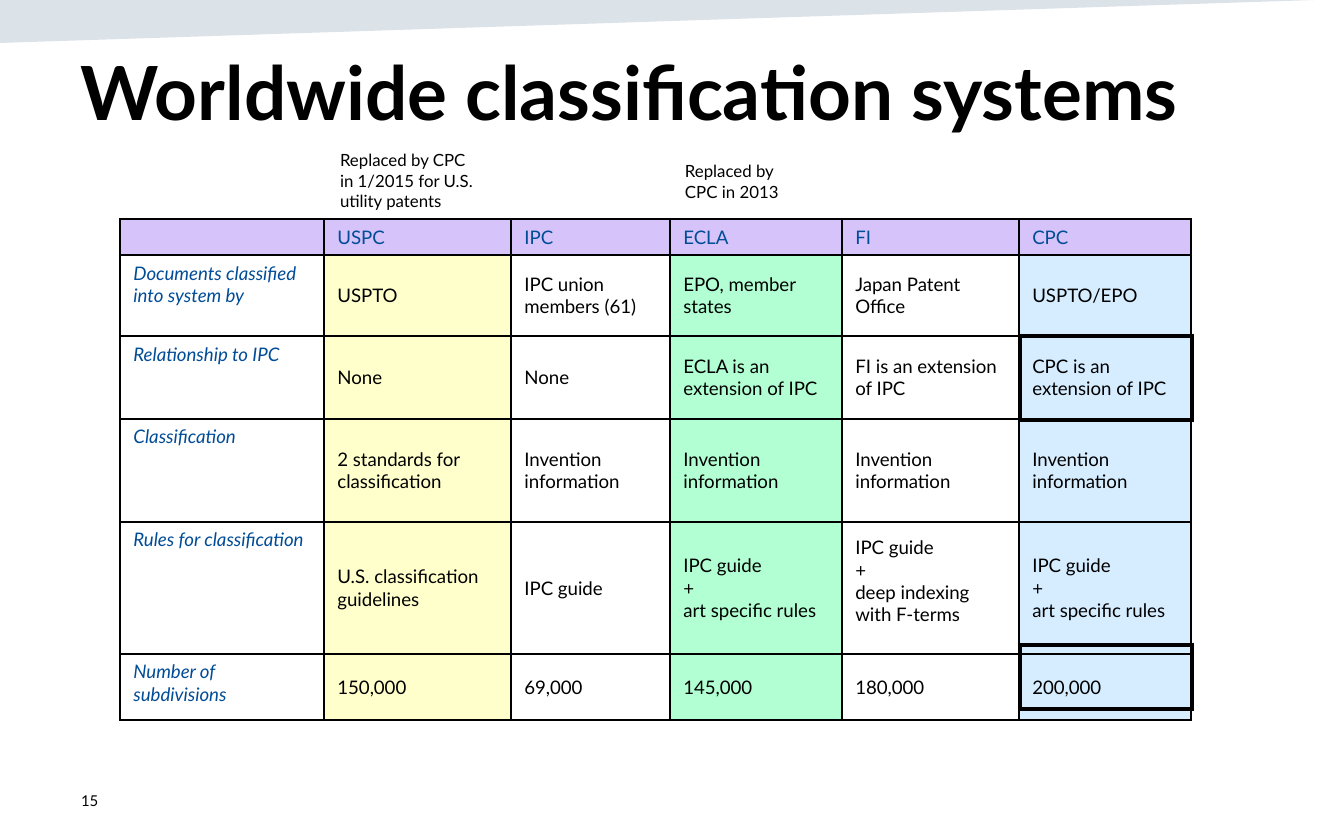
from dataclasses import dataclass

from lxml import etree
from pptx import Presentation
from pptx.dml.color import RGBColor
from pptx.enum import text
from pptx.oxml import ns
from pptx.util import Emu, Pt

EMU_PER_PX = 914400 / 134.4
FONT = "Lato"

BLACK = RGBColor(0x00, 0x00, 0x00)
WHITE = RGBColor(0xFF, 0xFF, 0xFF)
BLUE = RGBColor(0x00, 0x4C, 0x97)
BAND_BLUE = RGBColor(0x16, 0x44, 0x69)
LILAC = RGBColor(0xD5, 0xC3, 0xF9)
YELLOW = RGBColor(0xFF, 0xFF, 0xCC)
GREEN = RGBColor(0xB1, 0xFF, 0xD2)
PALE_BLUE = RGBColor(0xD6, 0xED, 0xFF)

TABLE_LEFT, TABLE_TOP = 120, 219
COLUMN_WIDTHS = (204, 187, 159, 172, 177, 172)
ROW_HEIGHTS = (36, 81, 83, 103, 132, 66)
COLUMN_FILLS = (WHITE, YELLOW, WHITE, GREEN, WHITE, PALE_BLUE)
ROWS = (
    ("", "USPC", "IPC", "ECLA", "FI", "CPC"),
    ("Documents classified into system by", "USPTO", "IPC union members (61)",
     "EPO, member states", "Japan Patent Office", "USPTO/EPO"),
    ("Relationship to IPC", "None", "None", "ECLA is an extension of IPC",
     "FI is an extension of IPC", "CPC is an extension of IPC"),
    ("Classification", "2 standards for classification")
    + ("Invention information",) * 4,
    ("Rules for classification", "U.S. classification guidelines", "IPC guide",
     "IPC guide\n+\nart specific rules",
     "IPC guide\n+\ndeep indexing with F-terms",
     "IPC guide\n+\nart specific rules"),
    ("Number of subdivisions", "150,000", "69,000", "145,000", "180,000", "200,000"),
)


@dataclass(frozen=True)
class Box:
    left: int
    top: int
    width: int
    height: int


@dataclass(frozen=True)
class Label:
    box: Box
    words: str
    size: int
    bold: bool = False
    margins: tuple[int, int] = (13, 7)
    anchor: text.MSO_ANCHOR = text.MSO_ANCHOR.TOP


LABELS = (
    Label(Box(81, 45, 1175, 84), "Worldwide classification systems", 40,
          bold=True, margins=(0, 1)),
    Label(Box(68, 779, 302, 44), "15", 8, anchor=text.MSO_ANCHOR.MIDDLE),
    Label(Box(327, 143, 163, 75),
          "Replaced by CPC in 1/2015 for U.S. utility patents", 9),
    Label(Box(672, 154, 140, 54), "Replaced by CPC in 2013", 9),
)
HIGHLIGHTS = (Box(1020, 336, 172, 84), Box(1020, 645, 172, 64))


def px(length: int) -> Emu:
    return Emu(round(length * EMU_PER_PX))


def place(box: Box) -> tuple[Emu, ...]:
    return px(box.left), px(box.top), px(box.width), px(box.height)


def set_all(target, **values) -> None:
    for name, value in values.items():
        setattr(target, name, value)


def style_text(frame, size: int, color: RGBColor, **font_values) -> None:
    for paragraph in frame.paragraphs:
        set_all(paragraph.font, name=FONT, size=Pt(size), **font_values)
        paragraph.font.color.rgb = color


def add_label(slide, label: Label) -> None:
    frame = slide.shapes.add_textbox(*place(label.box)).text_frame
    side, end = map(px, label.margins)
    set_all(frame, text=label.words, word_wrap=True, vertical_anchor=label.anchor,
            margin_left=side, margin_right=side, margin_top=end, margin_bottom=end)
    style_text(frame, label.size, BLACK, bold=label.bold)


def add_top_band(slide) -> None:
    builder = slide.shapes.build_freeform(0, 0, scale=EMU_PER_PX)
    builder.add_line_segments([(0, 43), (1347, -1)], close=True)
    band = builder.convert_to_shape()
    band.shadow.inherit = False
    band.fill.solid()
    band.fill.fore_color.rgb = BAND_BLUE
    band.line.fill.background()
    color = band.fill._xPr.find(".//" + ns.qn("a:srgbClr"))
    etree.SubElement(color, ns.qn("a:alpha"), val="15000")


def add_plain_table(slide, box: Box, rows: int, columns: int):
    table = slide.shapes.add_table(rows, columns, *place(box)).table
    set_all(table, first_row=False, horz_banding=False)
    return table


def add_borders(cell, **widths: float) -> None:
    """Draw black cell borders; keys are L, R, T, B and values are points."""
    properties = cell._tc.get_or_add_tcPr()
    for side, width in widths.items():
        line = etree.SubElement(properties, ns.qn(f"a:ln{side}"), w=str(Pt(width)))
        fill = etree.SubElement(line, ns.qn("a:solidFill"))
        etree.SubElement(fill, ns.qn("a:srgbClr"), val=str(BLACK))


def fill_cell(cell, words: str, row: int, column: int) -> None:
    is_header, is_row_name = row == 0, column == 0
    add_borders(cell, L=1, R=1, T=0.75 if row == 1 else 1, B=0.75 if is_header else 1)
    cell.fill.solid()
    cell.fill.fore_color.rgb = LILAC if is_header else COLUMN_FILLS[column]
    if is_row_name and not is_header:
        cell.fill.background()
    cell.text = words
    at_top = is_header or is_row_name
    cell.vertical_anchor = text.MSO_ANCHOR.TOP if at_top else text.MSO_ANCHOR.MIDDLE
    style_text(cell.text_frame, 10, BLUE if at_top else BLACK,
               italic=is_row_name and not is_header)


def add_comparison_table(slide) -> None:
    box = Box(TABLE_LEFT, TABLE_TOP, sum(COLUMN_WIDTHS), sum(ROW_HEIGHTS))
    table = add_plain_table(slide, box, len(ROWS), len(COLUMN_WIDTHS))
    for column, width in zip(table.columns, COLUMN_WIDTHS):
        column.width = px(width)
    for row, height in zip(table.rows, ROW_HEIGHTS):
        row.height = px(height)
    for row, row_words in enumerate(ROWS):
        for column, words in enumerate(row_words):
            fill_cell(table.cell(row, column), words, row, column)
    set_all(table.cell(4, 4), vertical_anchor=text.MSO_ANCHOR.BOTTOM,
            margin_top=px(13), margin_bottom=px(28))


def add_highlight(slide, box: Box) -> None:
    """Frame a cell with a one-cell table that has thick borders and no fill."""
    cell = add_plain_table(slide, box, 1, 1).cell(0, 0)
    add_borders(cell, L=3, R=3, T=3, B=3)
    cell.fill.background()
    style_text(cell.text_frame, 10, BLACK)


def main() -> None:
    presentation = Presentation()
    set_all(presentation, slide_width=px(1344), slide_height=px(840))
    slide = presentation.slides.add_slide(presentation.slide_layouts[6])
    add_top_band(slide)
    for label in LABELS:
        add_label(slide, label)
    add_comparison_table(slide)
    for box in HIGHLIGHTS:
        add_highlight(slide, box)
    presentation.save("out.pptx")


if __name__ == "__main__":
    main()
